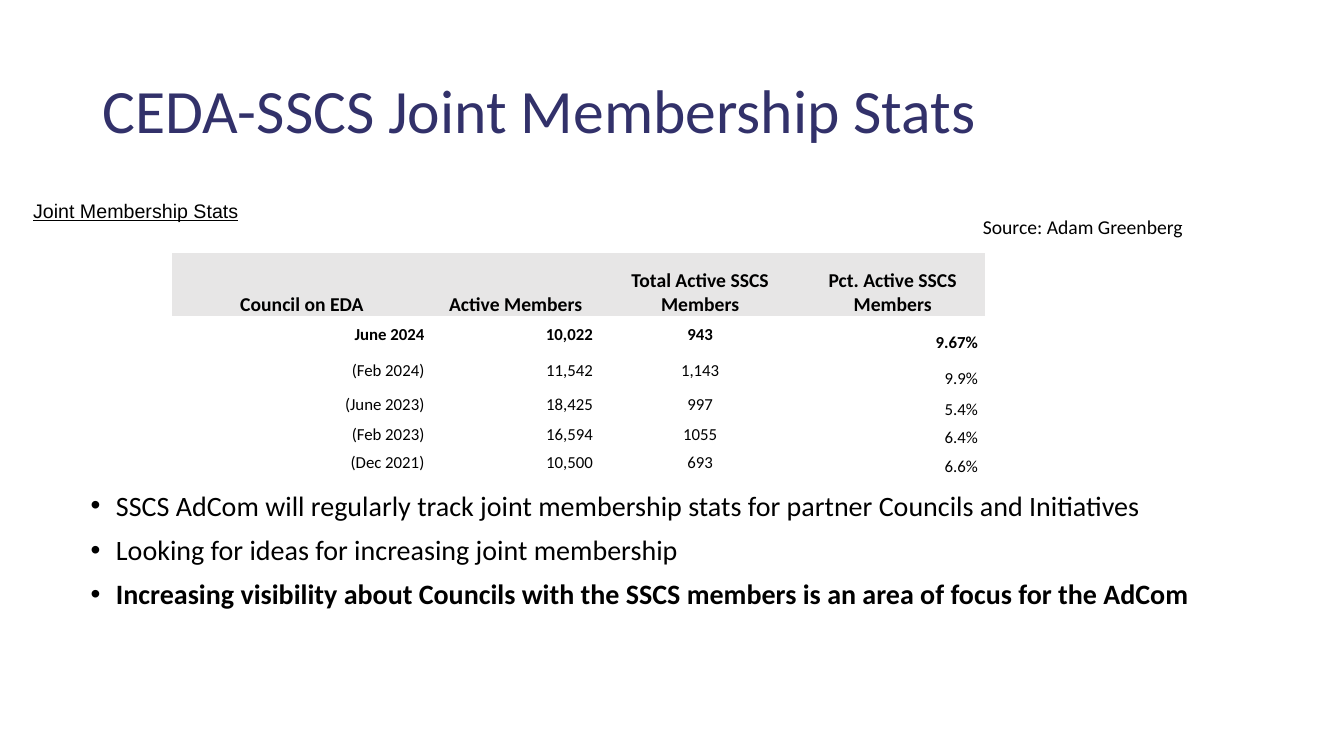
"""Build the joint membership statistics slide."""
from pptx import Presentation
from pptx import util as u
from pptx.dml.color import RGBColor
from pptx.enum import text
from pptx.oxml import ns, xmlchemy

NAVY = RGBColor(0x32, 0x31, 0x6A)
BLACK = RGBColor(0, 0, 0)
GREY = RGBColor(0xE7, 0xE6, 0xE6)
NO_STYLE = "{2D5ABB26-0587-4C30-8999-92F81FD0307C}"
LEFT, CENTER, RIGHT = text.PP_ALIGN.LEFT, text.PP_ALIGN.CENTER, text.PP_ALIGN.RIGHT
MIDDLE, BOTTOM = text.MSO_ANCHOR.MIDDLE, text.MSO_ANCHOR.BOTTOM

COLUMNS = [2.57, 1.67, 1.99, 1.83]
ROWS = [0.63, 0.36, 0.36, 0.31, 0.28, 0.28]
ALIGNMENTS = [RIGHT, RIGHT, CENTER, RIGHT]
MEMBERSHIP = [
    ["Council on EDA", "Active Members", "Total Active SSCS Members",
     "Pct. Active SSCS Members"],
    ["June 2024", "10,022", "943", "9.67%"],
    ["(Feb 2024)", "11,542", "1,143", "9.9%"],
    ["(June 2023)", "18,425", "997", "5.4%"],
    ["(Feb 2023)", "16,594", "1055", "6.4%"],
    ["(Dec 2021)", "10,500", "693", "6.6%"],
]
POINTS = [
    ("SSCS AdCom will regularly track joint membership stats for partner "
     "Councils and Initiatives", False),
    ("Looking for ideas for increasing joint membership", False),
    ("Increasing visibility about Councils with the SSCS members is an area "
     "of focus for the AdCom", True),
]


def place(shape, left, top, width, height):
    """Move and size a shape in inches."""
    shape.left, shape.top = u.Inches(left), u.Inches(top)
    shape.width, shape.height = u.Inches(width), u.Inches(height)


def write(para, words, size, color=BLACK, name="Calibri", bold=False,
          underline=False, align=LEFT):
    """Add one formatted run to a paragraph."""
    para.alignment = align
    span = para.add_run()
    span.text = words
    font = span.font
    font.size, font.name = u.Pt(size), name
    font.bold, font.underline = bold, underline
    font.color.rgb = color


def add_title(page, words):
    """Fill the title placeholder."""
    title = page.shapes.title
    place(title, 0.92, 0.4, 11.5, 1.45)
    frame = title.text_frame
    frame.auto_size = text.MSO_AUTO_SIZE.NONE
    frame.vertical_anchor = MIDDLE
    para = frame.paragraphs[0]
    para.line_spacing = 0.9
    write(para, words, 44, NAVY)


def add_bullets(page, points):
    """Fill the body placeholder with a bulleted list."""
    body = page.placeholders[1]
    place(body, 0.8, 4.83, 11.5, 0.4)
    frame = body.text_frame
    frame.auto_size = text.MSO_AUTO_SIZE.NONE
    for index, (words, bold) in enumerate(points):
        para = frame.add_paragraph() if index else frame.paragraphs[0]
        para.line_spacing = 0.9
        para.space_before = u.Pt(10 if index else 0)
        props = para._p.get_or_add_pPr()
        props.set("marL", str(u.Inches(0.25)))
        props.set("indent", str(u.Inches(-0.25)))
        for tag, key, value in (("a:buFont", "typeface", "Arial"),
                                ("a:buChar", "char", "•")):
            bullet = xmlchemy.OxmlElement(tag)
            bullet.set(key, value)
            props.append(bullet)
        write(para, words, 20, bold=bold)


def add_label(page, words, left, top, width, **style):
    """Add a one-line text box."""
    box = page.shapes.add_textbox(u.Inches(left), u.Inches(top),
                                  u.Inches(width), u.Inches(0.34))
    box.text_frame.word_wrap = True
    write(box.text_frame.paragraphs[0], words, 14, **style)


def fill_cell(cell, words, row, column):
    """Format and fill one table cell."""
    header = row == 0
    cell.margin_left = cell.margin_right = u.Inches(0.07)
    cell.margin_top = cell.margin_bottom = 0
    cell.vertical_anchor = BOTTOM if header or column == 3 else MIDDLE
    if header:
        cell.fill.solid()
        cell.fill.fore_color.rgb = GREY
    else:
        cell.fill.background()
    write(cell.text_frame.paragraphs[0], words, 14 if header else 12,
          bold=row < 2, align=CENTER if header else ALIGNMENTS[column])


def add_membership_table(page):
    """Add the membership table without style borders."""
    table = page.shapes.add_table(
        len(ROWS), len(COLUMNS), u.Inches(1.71), u.Inches(2.51),
        u.Inches(sum(COLUMNS)), u.Inches(sum(ROWS))).table
    table.horz_banding = False
    table._tbl.tblPr.find(ns.qn("a:tableStyleId")).text = NO_STYLE
    for column, width in zip(table.columns, COLUMNS):
        column.width = u.Inches(width)
    for r, (height, values) in enumerate(zip(ROWS, MEMBERSHIP)):
        table.rows[r].height = u.Inches(height)
        for c, words in enumerate(values):
            fill_cell(table.cell(r, c), words, r, c)


def main():
    """Build and save the slide."""
    deck = Presentation()
    deck.slide_width, deck.slide_height = u.Inches(13.33), u.Inches(7.5)
    page = deck.slides.add_slide(deck.slide_layouts[1])
    add_title(page, "CEDA-SSCS Joint Membership Stats")
    add_bullets(page, POINTS)
    add_label(page, "Joint Membership Stats", 0.23, 1.92, 4.68,
              name="Arial", underline=True)
    add_membership_table(page)
    add_label(page, "Source: Adam Greenberg", 9.65, 2.08, 2.94)
    deck.save("out.pptx")


if __name__ == "__main__":
    main()
